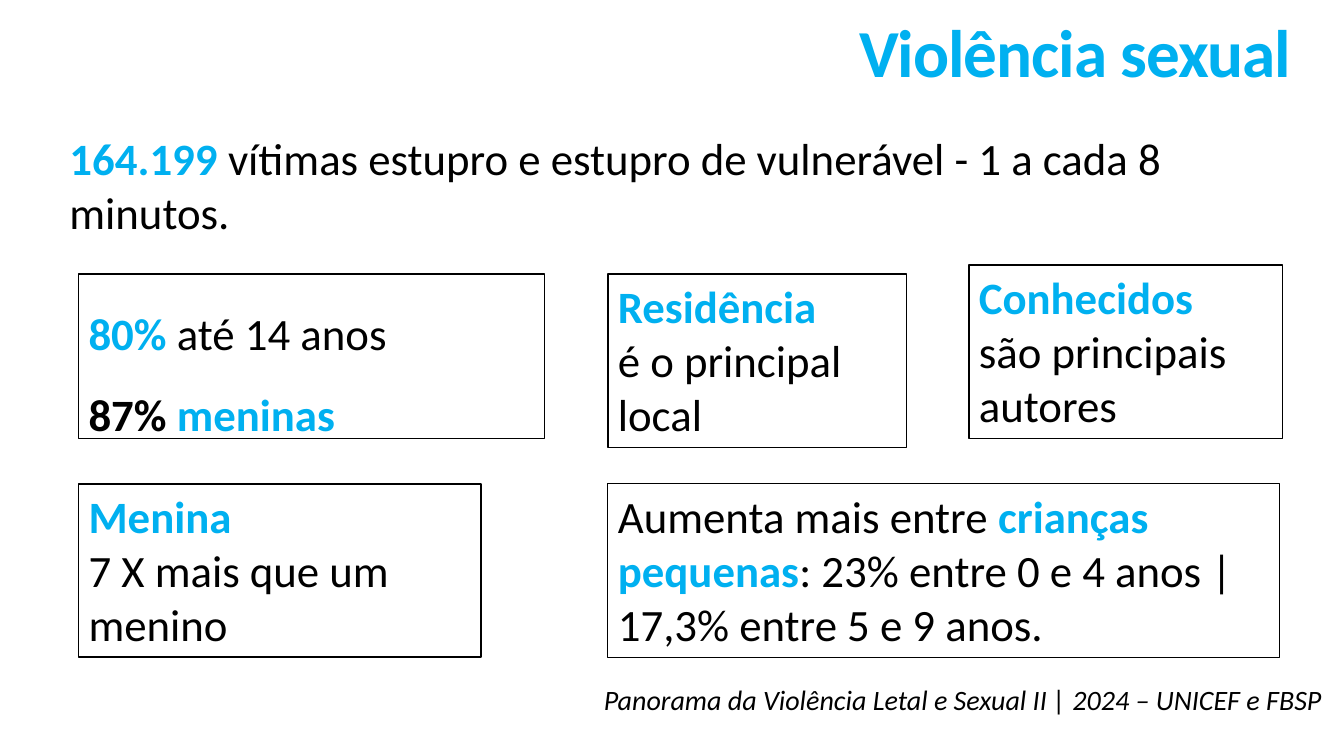
import pptx
import pptx.util
import pptx.dml.color
import pptx.enum.shapes
import pptx.enum.text

COLORS = {"blue": "00B0F0", "black": "000000", "white": "FFFFFF"}
STYLES = {
    "plain": ("black", {"bold": False, "italic": False}),
    "strong": ("black", {"bold": True, "italic": False}),
    "key": ("blue", {"bold": True, "italic": False}),
    "source": ("black", {"bold": False, "italic": True}),
}

TITLE = [[("Violência sexual", "key")]]
VICTIMS = [[
    ("164.199 ", "key"),
    ("vítimas estupro e estupro de vulnerável - 1 a cada 8 minutos.", "plain"),
]]
SOURCE = [[("Panorama da Violência Letal e Sexual II | 2024 – UNICEF e FBSP", "source")]]

COLUMNS = {"left": 0.78, "middle": 6.03, "right": 9.61}
ROWS = {"upper": 2.72, "lower": 4.8}
CARD_HEIGHT = 1.72
FACTS = [
    {"cell": ("left", "upper"), "width": 4.62, "height": 1.63, "spacing": 1.5,
     "text": [[("80% ", "key"), ("até 14 anos", "plain")],
              [("87%", "strong"), (" meninas", "key")]]},
    {"cell": ("left", "lower"), "width": 3.99,
     "text": [[("Menina", "key")], [("7 X mais que um menino", "plain")]]},
    {"cell": ("middle", "upper"), "width": 2.96,
     "text": [[("Residência", "key")], [("é o principal local", "plain")]]},
    {"cell": ("right", "upper"), "width": 3.11, "raise": 0.09,
     "text": [[("Conhecidos", "key")], [("são principais autores", "plain")]]},
    {"cell": ("middle", "lower"), "width": 6.66, "line": 0.75,
     "text": [[("Aumenta mais entre ", "plain"), ("crianças pequenas", "key"),
               (": 23% entre 0 e 4 anos | 17,3% entre 5 e 9 anos.", "plain")]]},
]


def color(name):
    return pptx.dml.color.RGBColor.from_string(COLORS[name])


def inches(*lengths):
    return [pptx.util.Inches(length) for length in lengths]


def write(frame, paragraphs, size=32, align="LEFT", spacing=1.0):
    frame_format = {
        "word_wrap": True,
        "auto_size": pptx.enum.text.MSO_AUTO_SIZE.NONE,
        "vertical_anchor": pptx.enum.text.MSO_ANCHOR.TOP,
    }
    for key, value in frame_format.items():
        setattr(frame, key, value)
    for index, pieces in enumerate(paragraphs):
        paragraph = frame.add_paragraph() if index else frame.paragraphs[0]
        paragraph.alignment = pptx.enum.text.PP_ALIGN[align]
        paragraph.line_spacing = spacing
        for words, style in pieces:
            tint, weight = STYLES[style]
            run = paragraph.add_run()
            run.text = words
            font_format = {"name": "Calibri", "size": pptx.util.Pt(size), **weight}
            for key, value in font_format.items():
                setattr(run.font, key, value)
            run.font.color.rgb = color(tint)


def add_fact(slide, fact):
    column, row = fact["cell"]
    top = ROWS[row] - fact.get("raise", 0)
    card = slide.shapes.add_shape(
        pptx.enum.shapes.MSO_SHAPE.RECTANGLE,
        *inches(COLUMNS[column], top, fact["width"], fact.get("height", CARD_HEIGHT)))
    card.shadow.inherit = False
    card.fill.solid()
    card.fill.fore_color.rgb = color("white")
    card.line.color.rgb = color("black")
    card.line.width = pptx.util.Pt(fact.get("line", 1))
    write(card.text_frame, fact["text"], spacing=fact.get("spacing", 1.0))


def main():
    deck = pptx.Presentation()
    deck.slide_width, deck.slide_height = inches(13.33, 7.5)
    slide = deck.slides.add_slide(deck.slide_layouts[5])
    for unused in list(slide.placeholders):
        if unused.placeholder_format.idx:
            unused.element.getparent().remove(unused.element)

    title = slide.shapes.title
    title.left, title.top, title.width, title.height = inches(0.25, 0.05, 12.66, 0.91)
    write(title.text_frame, TITLE, 48, "RIGHT")
    title.text_frame.paragraphs[0].runs[0].font._element.set("spc", "-70")

    source = slide.shapes.add_textbox(*inches(5.89, 6.72, 7.44, 0.44))
    write(source.text_frame, SOURCE, 20)
    victims = slide.shapes.add_textbox(*inches(0.59, 1.25, 11.92, 1.18))
    write(victims.text_frame, VICTIMS)
    for fact in FACTS:
        add_fact(slide, fact)
    deck.save("out.pptx")


if __name__ == "__main__":
    main()
